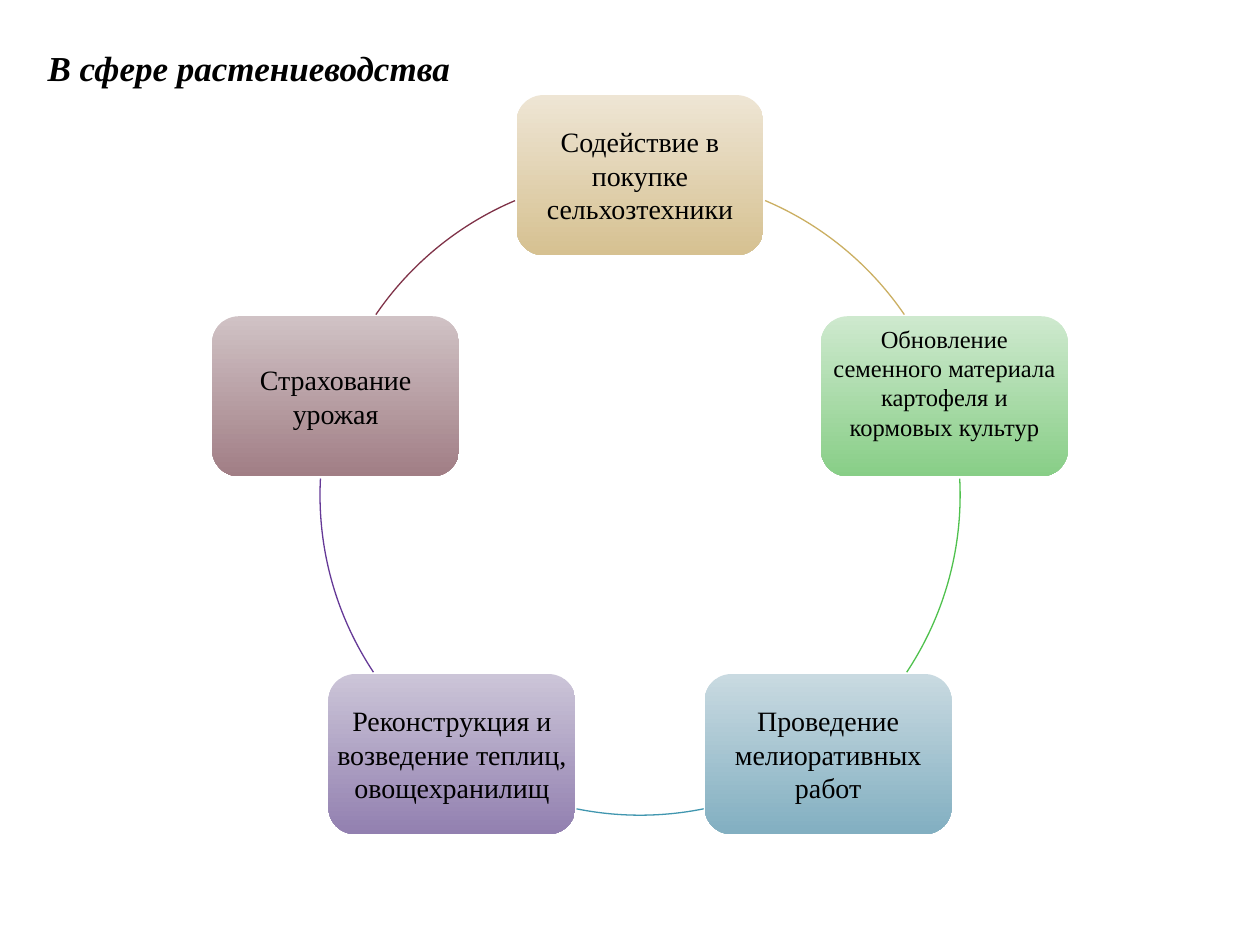
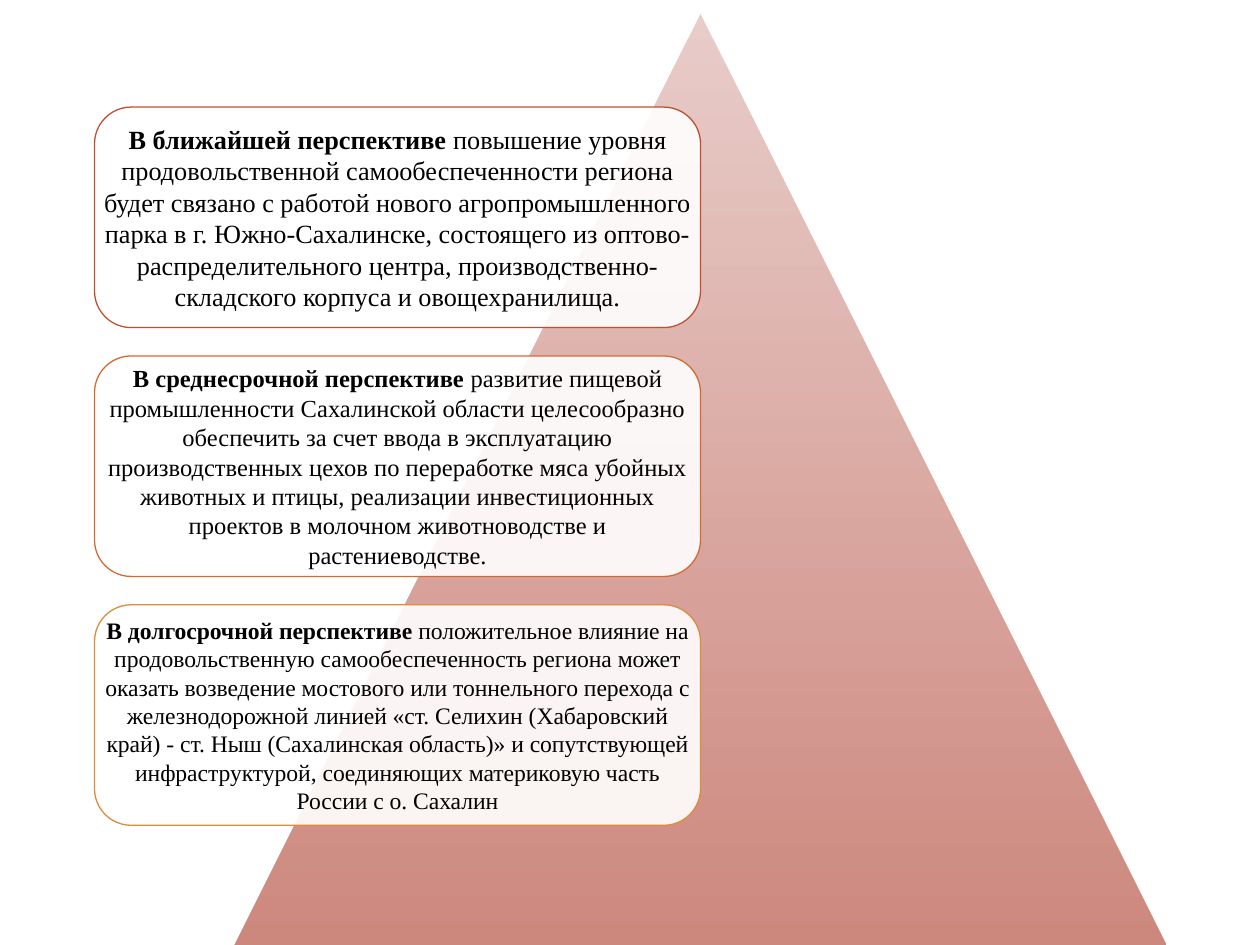
import math

import pptx
from lxml import etree
from pptx.dml.color import RGBColor
from pptx.enum.shapes import MSO_SHAPE
from pptx.enum.text import MSO_ANCHOR, PP_ALIGN
from pptx.oxml.ns import qn
from pptx.util import Inches, Pt

FONT = "Times New Roman"
BLACK = RGBColor(0x00, 0x00, 0x00)
WHITE = RGBColor(0xFF, 0xFF, 0xFF)
PYRAMID_FILL = (RGBColor(0xE8, 0xCC, 0xC9), RGBColor(0xCD, 0x88, 0x7E))

# Text, size, anchor, gradient top and bottom
MEASURES = [
    ("Содействие в покупке сельхозтехники", 16, MSO_ANCHOR.MIDDLE,
     RGBColor(0xEE, 0xE5, 0xD4), RGBColor(0xD6, 0xC1, 0x91)),
    ("Обновление семенного материала картофеля и кормовых культур", 14, MSO_ANCHOR.TOP,
     RGBColor(0xCE, 0xE9, 0xCE), RGBColor(0x88, 0xCE, 0x87)),
    ("Проведение мелиоративных работ", 16, MSO_ANCHOR.MIDDLE,
     RGBColor(0xC9, 0xDA, 0xE1), RGBColor(0x82, 0xAF, 0xC1)),
    ("Реконструкция и возведение теплиц, овощехранилищ", 16, MSO_ANCHOR.MIDDLE,
     RGBColor(0xCC, 0xC5, 0xD8), RGBColor(0x92, 0x80, 0xB0)),
    ("Страхование урожая", 16, MSO_ANCHOR.MIDDLE,
     RGBColor(0xD0, 0xC2, 0xC5), RGBColor(0xA1, 0x7E, 0x85)),
]

# Start and end in degrees, clockwise from the right
ARCS = [
    (293, 325.65, RGBColor(0xCB, 0xAF, 0x62)),
    (357.02, 33.58, RGBColor(0x4F, 0xC1, 0x4D)),
    (78.55, 101.45, RGBColor(0x40, 0x96, 0xAF)),
    (146.42, 182.98, RGBColor(0x65, 0x39, 0x97)),
    (214.35, 247, RGBColor(0x7F, 0x32, 0x48)),
]

PROSPECTS = [
    ("В ближайшей перспективе ",
     "повышение уровня продовольственной самообеспеченности региона будет связано "
     "с работой нового агропромышленного парка в г. Южно-Сахалинске, состоящего из "
     "оптово-распределительного центра, производственно-складского корпуса и "
     "овощехранилища.", 15, RGBColor(0xC0, 0x4F, 0x32)),
    ("В среднесрочной перспективе ",
     "развитие пищевой промышленности Сахалинской области целесообразно обеспечить "
     "за счет ввода в эксплуатацию производственных цехов по переработке мяса "
     "убойных животных и птицы, реализации инвестиционных проектов в молочном "
     "животноводстве и растениеводстве.", 14, RGBColor(0xD3, 0x6A, 0x33)),
    ("В долгосрочной перспективе ",
     "положительное влияние на продовольственную самообеспеченность региона может "
     "оказать возведение мостового или тоннельного перехода с железнодорожной "
     "линией «ст. Селихин (Хабаровский край) - ст. Ныш (Сахалинская область)» и "
     "сопутствующей инфраструктурой, соединяющих материковую часть России с "
     "о. Сахалин", 13.5, RGBColor(0xDD, 0x8B, 0x3D)),
]


def add_plain_shape(page, kind, left, top, width, height):
    """Add a preset shape with no shadow, fill or line."""
    shape = page.shapes.add_shape(
        kind, Inches(left), Inches(top), Inches(width), Inches(height))
    shape.shadow.inherit = False
    shape.fill.background()
    shape.line.fill.background()
    return shape


def fill_downwards(shape, top_colour, bottom_colour):
    shape.fill.gradient()
    shape.fill.gradient_angle = 270
    for stop, position, colour in zip(
            shape.fill.gradient_stops, (0, 1), (top_colour, bottom_colour)):
        stop.position = position
        stop.color.rgb = colour


def outline(shape, colour):
    shape.line.color.rgb = colour
    shape.line.width = Pt(0.75)


def add_label(page, left, top, width, height, spans, size, anchor=MSO_ANCHOR.MIDDLE):
    """Add centred text; spans are (text, bold) pairs."""
    box = page.shapes.add_textbox(
        Inches(left), Inches(top), Inches(width), Inches(height))
    frame = box.text_frame
    frame.word_wrap = True
    frame.vertical_anchor = anchor
    margin = Pt(0.3 * size)
    frame.margin_left = frame.margin_right = margin
    frame.margin_top = frame.margin_bottom = margin
    para = frame.paragraphs[0]
    para.alignment = PP_ALIGN.CENTER
    para.font.name = FONT
    para.font.size = Pt(size)
    para.font.color.rgb = BLACK
    for text, bold in spans:
        span = para.add_run()
        span.text = text
        span.font.bold = bold


def add_title(page, text):
    box = page.shapes.add_textbox(Inches(0.28), Inches(0.32), Inches(5), Inches(0.44))
    box.text_frame.word_wrap = True
    para = box.text_frame.paragraphs[0]
    para.text = text
    para.font.name = FONT
    para.font.size = Pt(20)
    para.font.bold = para.font.italic = True
    para.font.color.rgb = BLACK


def add_cycle(page, left, top, diameter):
    """Spread the measures evenly around a ring, joined by arcs."""
    radius = diameter / 2
    width, height = 1.96, 1.27
    for index, (text, size, anchor, light, dark) in enumerate(MEASURES):
        angle = math.radians(360 / len(MEASURES) * index - 90)
        place = (left + radius * (1 + math.cos(angle)) - width / 2,
                 top + radius * (1 + math.sin(angle)) - height / 2, width, height)
        card = add_plain_shape(page, MSO_SHAPE.ROUNDED_RECTANGLE, *place)
        fill_downwards(card, light, dark)
        add_label(page, *place, [(text, False)], size, anchor)

    for start, end, colour in ARCS:
        arc = add_plain_shape(page, MSO_SHAPE.ARC, left, top, diameter, diameter)
        # Angles count 60000 to the degree, adjustments 100000 to the unit
        arc.adjustments[0] = start * 0.6
        arc.adjustments[1] = end * 0.6
        outline(arc, colour)


def add_pyramid(page, left, top, side):
    """Draw the triangle and the stack of prospects that ends at its axis."""
    triangle = add_plain_shape(page, MSO_SHAPE.ISOSCELES_TRIANGLE, left, top, side, side)
    fill_downwards(triangle, *PYRAMID_FILL)
    width, height, pitch = 4.81, 1.75, 1.975
    for index, (lead, text, size, colour) in enumerate(PROSPECTS):
        place = (left + side / 2 - width, top + side / 10 + pitch * index, width, height)
        card = add_plain_shape(page, MSO_SHAPE.ROUNDED_RECTANGLE, *place)
        card.fill.solid()
        card.fill.fore_color.rgb = WHITE
        white = card.fill._xPr.find(".//" + qn("a:srgbClr"))
        etree.SubElement(white, qn("a:alpha"), val="90000")
        outline(card, colour)
        add_label(page, *place, [(lead, True), (text, False)], size)


def main():
    deck = pptx.Presentation()
    deck.slide_width, deck.slide_height = Inches(10), Inches(7.5)
    blank = deck.slide_layouts[6]

    page = deck.slides.add_slide(blank)
    add_title(page, "В сфере растениеводства")
    add_cycle(page, 2.54, 1.39, 5.08)

    page = deck.slides.add_slide(blank)
    add_pyramid(page, 1.86, 0.11, 7.4)

    deck.save("out.pptx")


if __name__ == "__main__":
    main()
